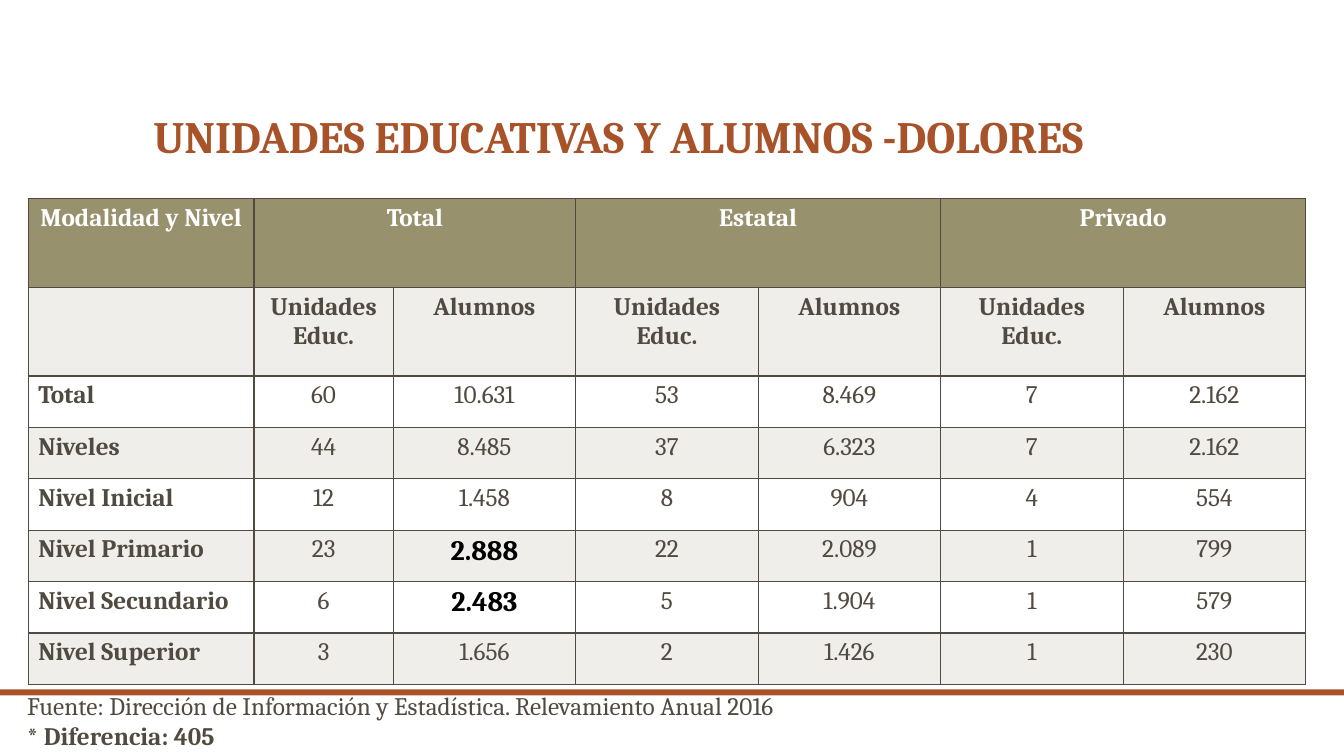
from pptx import Presentation
from pptx.dml.color import RGBColor
from pptx.enum.shapes import MSO_SHAPE
from pptx.enum.text import MSO_ANCHOR, PP_ALIGN
from pptx.oxml import parse_xml
from pptx.oxml.ns import nsdecls

EMU_PER_PX = 9144  # 100 px to the inch
FONT = "Cambria"
COLORS = {
    "rust": "A85229",
    "text": "514A40",
    "olive": "98916E",
    "band": "EFEEEB",
    "white": "FFFFFF",
    "black": "000000",
}
COLUMN_WIDTHS = [224, 138] + [181] * 5
ROW_HEIGHTS = [88] * 2 + [51] * 6
GROUPS = ["Total", "Estatal", "Privado"]
LEVELS = [
    ["Total", "60", "10.631", "53", "8.469", "7", "2.162"],
    ["Niveles", "44", "8.485", "37", "6.323", "7", "2.162"],
    ["Nivel Inicial", "12", "1.458", "8", "904", "4", "554"],
    ["Nivel Primario", "23", "2.888", "22", "2.089", "1", "799"],
    ["Nivel Secundario", "6", "2.483", "5", "1.904", "1", "579"],
    ["Nivel Superior", "3", "1.656", "2", "1.426", "1", "230"],
]
HIGHLIGHTS = {"2.888", "2.483"}


def px(*lengths):
    return [length * EMU_PER_PX for length in lengths]


def rgb(name):
    return RGBColor.from_string(COLORS[name])


def write(para, text, color="text", **font_values):
    span = para.add_run()
    span.text = text
    values = {"name": FONT, "size": 18 * 12700, "bold": False} | font_values
    for attribute, value in values.items():
        setattr(span.font, attribute, value)
    span.font.color.rgb = rgb(color)


def add_title(page, text):
    title = page.shapes.title
    title.left, title.top, title.width, title.height = px(142, 42, 1050, 125)
    frame = title.text_frame
    frame.word_wrap = True
    frame.vertical_anchor = MSO_ANCHOR.BOTTOM
    para = frame.paragraphs[0]
    para.alignment = PP_ALIGN.LEFT
    para.line_spacing = 0.9
    write(para, text, "rust", size=32 * 12700, bold=True)


def add_rule(page):
    rule = page.shapes.add_shape(MSO_SHAPE.RECTANGLE, *px(0, 684, 1333, 6))
    rule.shadow.inherit = False
    rule.fill.solid()
    rule.fill.fore_color.rgb = rgb("rust")
    rule.line.fill.background()


def add_source_note(page, lines):
    box = page.shapes.add_textbox(*px(17, 680, 1316, 71))
    frame = box.text_frame
    frame.word_wrap = True
    for index, (text, bold) in enumerate(lines):
        para = frame.add_paragraph() if index else frame.paragraphs[0]
        write(para, text, bold=bold)


def style_cell(cell, fill):
    """Draw the four borders and the fill of a cell."""
    properties = cell._tc.get_or_add_tcPr()
    for side in "LRTB":
        properties.append(parse_xml(
            f'<a:ln{side} {nsdecls("a")} w="12700"><a:solidFill>'
            f'<a:srgbClr val="{COLORS["text"]}"/></a:solidFill></a:ln{side}>'
        ))
    cell.fill.solid()
    cell.fill.fore_color.rgb = rgb(fill)


def cell_format(row, column, text):
    if row == 0:
        return {"color": "white", "bold": True}
    if text in HIGHLIGHTS:
        return {"color": "black", "bold": True, "size": 20 * 12700}
    return {"bold": row == 1 or column == 0}


def add_level_table(page):
    group_row = ["Modalidad y Nivel"]
    for group in GROUPS:
        group_row += [group, ""]
    unit_row = [""] + ["Unidades Educ.", "Alumnos"] * len(GROUPS)
    rows = [group_row, unit_row] + LEVELS

    frame = page.shapes.add_table(
        len(rows), len(COLUMN_WIDTHS),
        *px(28, 197, sum(COLUMN_WIDTHS), sum(ROW_HEIGHTS)))
    table = frame.table
    for column, width in zip(table.columns, px(*COLUMN_WIDTHS)):
        column.width = width
    for row, height in zip(table.rows, px(*ROW_HEIGHTS)):
        row.height = height

    for r, texts in enumerate(rows):
        fill = "olive" if r == 0 else "band" if r % 2 else "white"
        for c, text in enumerate(texts):
            cell = table.cell(r, c)
            style_cell(cell, fill)
            if text:
                para = cell.text_frame.paragraphs[0]
                centred = r < 2 or c > 0
                para.alignment = PP_ALIGN.CENTER if centred else PP_ALIGN.LEFT
                write(para, text, **cell_format(r, c, text))
    for c in range(1, len(COLUMN_WIDTHS), 2):
        table.cell(0, c).merge(table.cell(0, c + 1))


def main():
    deck = Presentation()
    deck.slide_width, deck.slide_height = px(1333, 750)
    page = deck.slides.add_slide(deck.slide_layouts[5])
    add_rule(page)
    add_title(page, "UNIDADES EDUCATIVAS Y ALUMNOS -DOLORES")
    add_source_note(page, [
        ("Fuente: Dirección de Información y Estadística. "
         "Relevamiento Anual 2016", False),
        ("* Diferencia: 405", True),
    ])
    add_level_table(page)
    deck.save("out.pptx")


if __name__ == "__main__":
    main()
